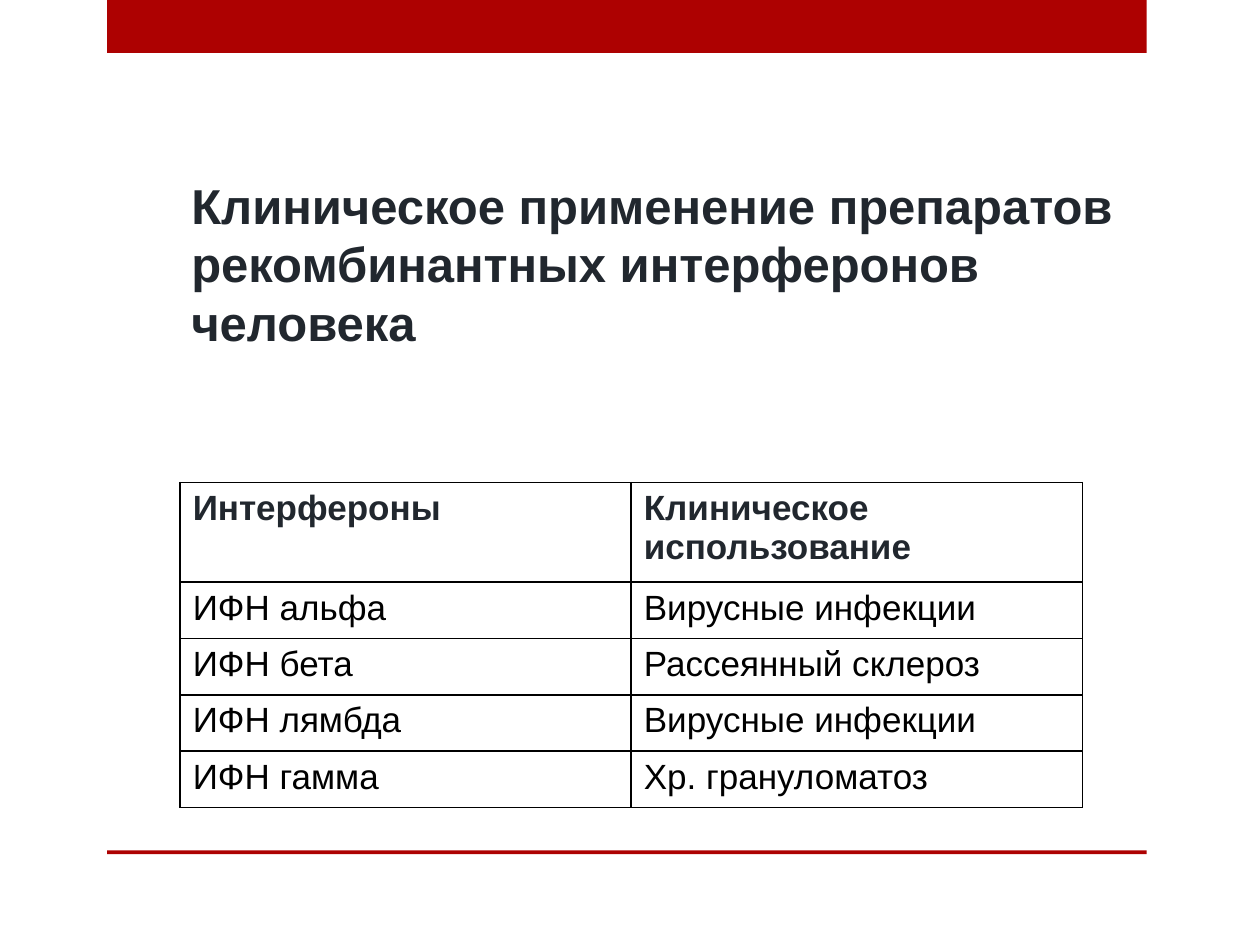
import pptx
import pptx.util
import pptx.dml.color
import pptx.enum.shapes
import pptx.oxml
import pptx.oxml.ns
from dataclasses import dataclass
from lxml import etree
from pptx.util import Inches


@dataclass(frozen=True)
class Theme:
    font: str = "Arial"
    accent: str = "AD0101"
    heading: str = "21272E"
    body: str = "000000"
    border: str = "000000"
    title_size: float = 28
    title_leading: float = 33.6
    table_size: float = 20
    border_width: float = 1


THEME = Theme()
TITLE = "Клиническое применение препаратов рекомбинантных интерферонов человека"
ROWS = [
    ("Интерфероны", "Клиническое использование"),
    ("ИФН альфа", "Вирусные инфекции"),
    ("ИФН бета", "Рассеянный склероз"),
    ("ИФН лямбда", "Вирусные инфекции"),
    ("ИФН гамма", "Хр. грануломатоз"),
]


def color(value):
    return pptx.dml.color.RGBColor.from_string(value)


def style_text(para, size, ink, bold):
    para.font.name = THEME.font
    para.font.size = pptx.util.Pt(size)
    para.font.color.rgb = color(ink)
    para.font.bold = bold


def add_band(page, left, top, width, height):
    band = page.shapes.add_shape(
        pptx.enum.shapes.MSO_SHAPE.RECTANGLE, left, top, width, height)
    band.shadow.inherit = False
    band.fill.solid()
    band.fill.fore_color.rgb = color(THEME.accent)
    band.line.fill.background()


def add_title(page, left, top, width, height):
    box = page.shapes.add_textbox(left, top, width, height)
    box.text_frame.word_wrap = True
    para = box.text_frame.paragraphs[0]
    para.text = TITLE
    para.line_spacing = pptx.util.Pt(THEME.title_leading)
    style_text(para, THEME.title_size, THEME.heading, True)


def add_borders(cell):
    properties = cell._tc.get_or_add_tcPr()
    for position, side in enumerate(("lnL", "lnR", "lnT", "lnB")):
        line = etree.Element(pptx.oxml.ns.qn(f"a:{side}"),
                             w=str(pptx.util.Pt(THEME.border_width)))
        fill = etree.SubElement(line, pptx.oxml.ns.qn("a:solidFill"))
        etree.SubElement(fill, pptx.oxml.ns.qn("a:srgbClr"), val=THEME.border)
        properties.insert(position, line)


def add_uses_table(page, left, top, width, height):
    header_height = Inches(0.79)
    table = page.shapes.add_table(
        len(ROWS), len(ROWS[0]), left, top, width, height).table
    table.first_row = table.horz_banding = False
    row_height = (height - header_height) // (len(ROWS) - 1)
    for index, texts in enumerate(ROWS):
        is_header = index == 0
        table.rows[index].height = header_height if is_header else row_height
        for cell, text in zip(table.rows[index].cells, texts):
            cell.text = text
            cell.fill.background()
            ink = THEME.heading if is_header else THEME.body
            style_text(cell.text_frame.paragraphs[0],
                       THEME.table_size, ink, is_header)
            add_borders(cell)


def main():
    deck = pptx.Presentation()
    deck.slide_width, deck.slide_height = Inches(10), Inches(7.5)
    page = deck.slides.add_slide(deck.slide_layouts[6])

    # Top bar and bottom rule
    for top, height in ((0, 0.42), (6.75, 0.03)):
        add_band(page, Inches(0.85), Inches(top), Inches(8.25), Inches(height))

    # Title and table
    add_title(page, Inches(1.42), Inches(1.34), Inches(7.92), Inches(1.51))
    add_uses_table(page, Inches(1.43), Inches(3.83), Inches(7.16), Inches(2.58))

    deck.save("out.pptx")


if __name__ == "__main__":
    main()
